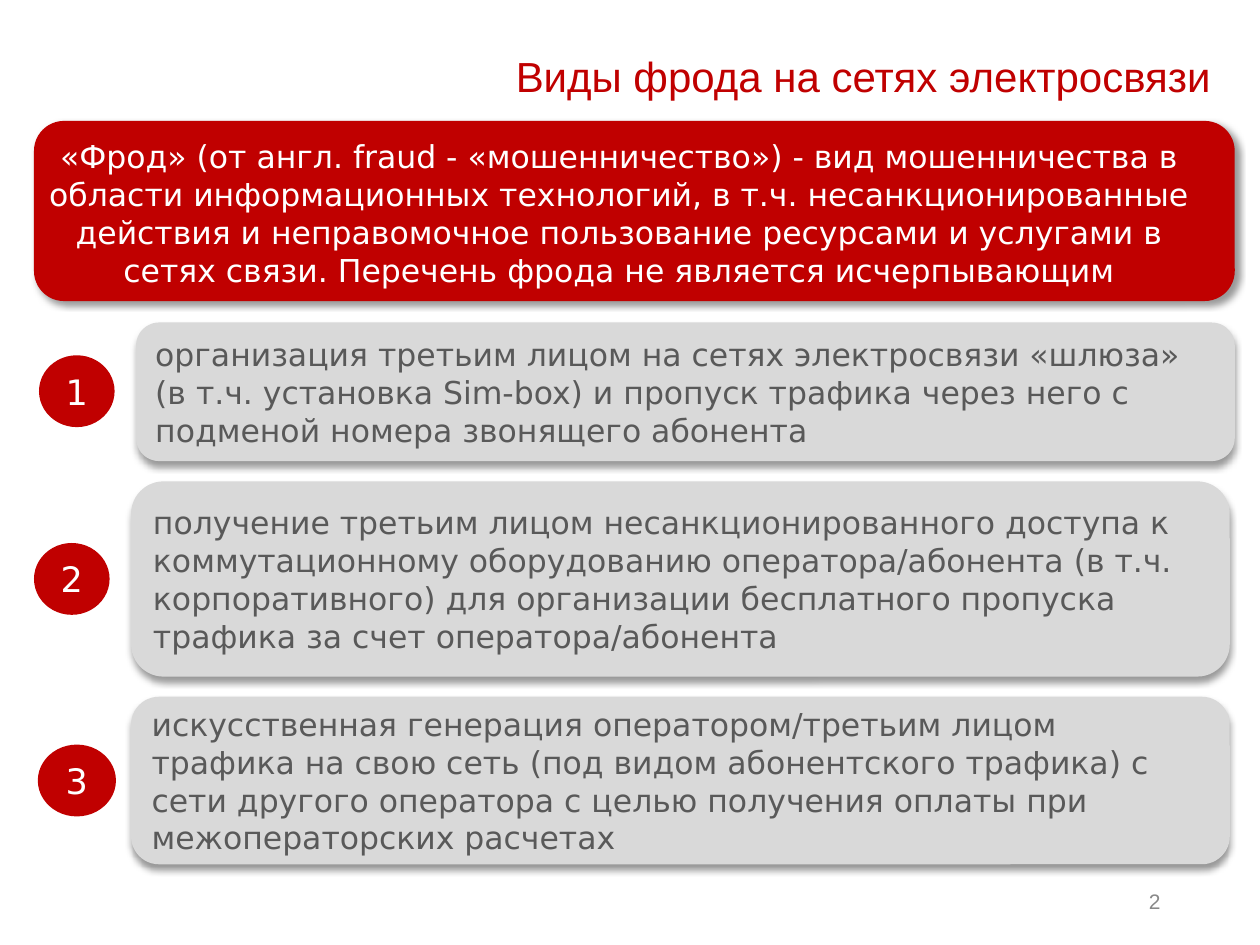
from lxml import etree
from pptx import Presentation
from pptx import util as u
from pptx.dml.color import RGBColor
from pptx.enum import shapes, text
from pptx.oxml.ns import qn

RED, GREY, DARK, WHITE = "C00000", "D9D9D9", "595959", "FFFFFF"
SANS, ARIAL = "DejaVu Sans", "Arial"
LEFT, MID, RIGHT = text.PP_ALIGN.LEFT, text.PP_ALIGN.CENTER, text.PP_ALIGN.RIGHT
TOP, CENTER = text.MSO_ANCHOR.TOP, text.MSO_ANCHOR.MIDDLE
OVAL, ROUND = shapes.MSO_SHAPE.OVAL, shapes.MSO_SHAPE.ROUNDED_RECTANGLE

LEAD = (
    "«Фрод» (от англ. fraud - «мошенничество») - вид мошенничества в области "
    "информационных технологий, в т.ч. несанкционированные действия и "
    "неправомочное пользование ресурсами и услугами в сетях связи. "
    "Перечень фрода не является исчерпывающим"
)
# (badge box, panel box, wording)
KINDS = [
    ((0.31, 2.82, 0.6, 0.57), (1.08, 2.56, 8.72, 1.1),
     "организация третьим лицом на сетях электросвязи «шлюза» (в т.ч. "
     "установка Sim-box) и пропуск трафика через него с подменой номера "
     "звонящего абонента"),
    ((0.27, 4.31, 0.6, 0.57), (1.04, 3.82, 8.72, 1.55),
     "получение третьим лицом несанкционированного доступа к коммутационному "
     "оборудованию оператора/абонента (в т.ч. корпоративного) для организации "
     "бесплатного пропуска трафика за счет оператора/абонента"),
    ((0.3, 5.91, 0.62, 0.57), (1.04, 5.53, 8.72, 1.33),
     "искусственная генерация оператором/третьим лицом трафика на свою сеть "
     "(под видом абонентского трафика) с сети другого оператора с целью "
     "получения оплаты при межоператорских расчетах"),
]


def paint(color, code):
    color.rgb = RGBColor.from_string(code)


class Deck:
    """Holds the text style and the current slide."""

    def __init__(self, slide, font=SANS, size=18):
        self.slide, self.font, self.size = slide, font, size

    def fill_text(self, shape, words, color, align, anchor=CENTER, size=None, font=None):
        frame = shape.text_frame
        frame.text = words
        frame.word_wrap = True
        frame.vertical_anchor = anchor
        para = frame.paragraphs[0]
        para.alignment = align
        face = para.runs[0].font
        face.name, face.size = font or self.font, u.Pt(size or self.size)
        paint(face.color, color)

    def label(self, box, words, color, align, **style):
        shape = self.slide.shapes.add_textbox(*map(u.Inches, box))
        self.fill_text(shape, words, color, align, **style)

    def form(self, kind, box, fill):
        shape = self.slide.shapes.add_shape(kind, *map(u.Inches, box))
        shape.shadow.inherit = False
        shape.fill.solid()
        paint(shape.fill.fore_color, fill)
        shape.line.fill.background()
        return shape

    def panel(self, box, fill, angle):
        """Rounded panel whose shadow falls at the given angle in degrees."""
        shape = self.form(ROUND, box, fill)
        effects = shape._element.spPr.find(qn("a:effectLst"))
        shade = etree.SubElement(
            effects, qn("a:outerShdw"), blurRad=str(u.Pt(4)), dist=str(u.Pt(3)),
            dir=str(angle * 60000), algn="ctr", rotWithShape="0")
        tint = etree.SubElement(shade, qn("a:srgbClr"), val="000000")
        etree.SubElement(tint, qn("a:alpha"), val="40000")
        return shape

    def badge(self, box, words):
        self.fill_text(self.form(OVAL, box, RED), words, WHITE, MID, size=20)


def main():
    show = Presentation()
    show.slide_width, show.slide_height = u.Inches(10), u.Inches(7.5)
    deck = Deck(show.slides.add_slide(show.slide_layouts[6]))

    deck.label((0.62, 0.27, 9.18, 0.66), "Виды фрода на сетях электросвязи ",
               RED, RIGHT, size=24, font=ARIAL)
    deck.panel((0.27, 0.96, 9.53, 1.43), RED, 45)
    deck.label((0.27, 1.04, 9.29, 1.31), LEAD, WHITE, MID, anchor=TOP)

    for num, (spot, box, words) in enumerate(KINDS, 1):
        deck.badge(spot, str(num))
        deck.fill_text(deck.panel(box, GREY, 90), words, DARK, LEFT)

    deck.label((8.81, 6.95, 0.5, 0.4), "2", "898989", RIGHT, size=12, font=ARIAL)
    show.save("out.pptx")


if __name__ == "__main__":
    main()
